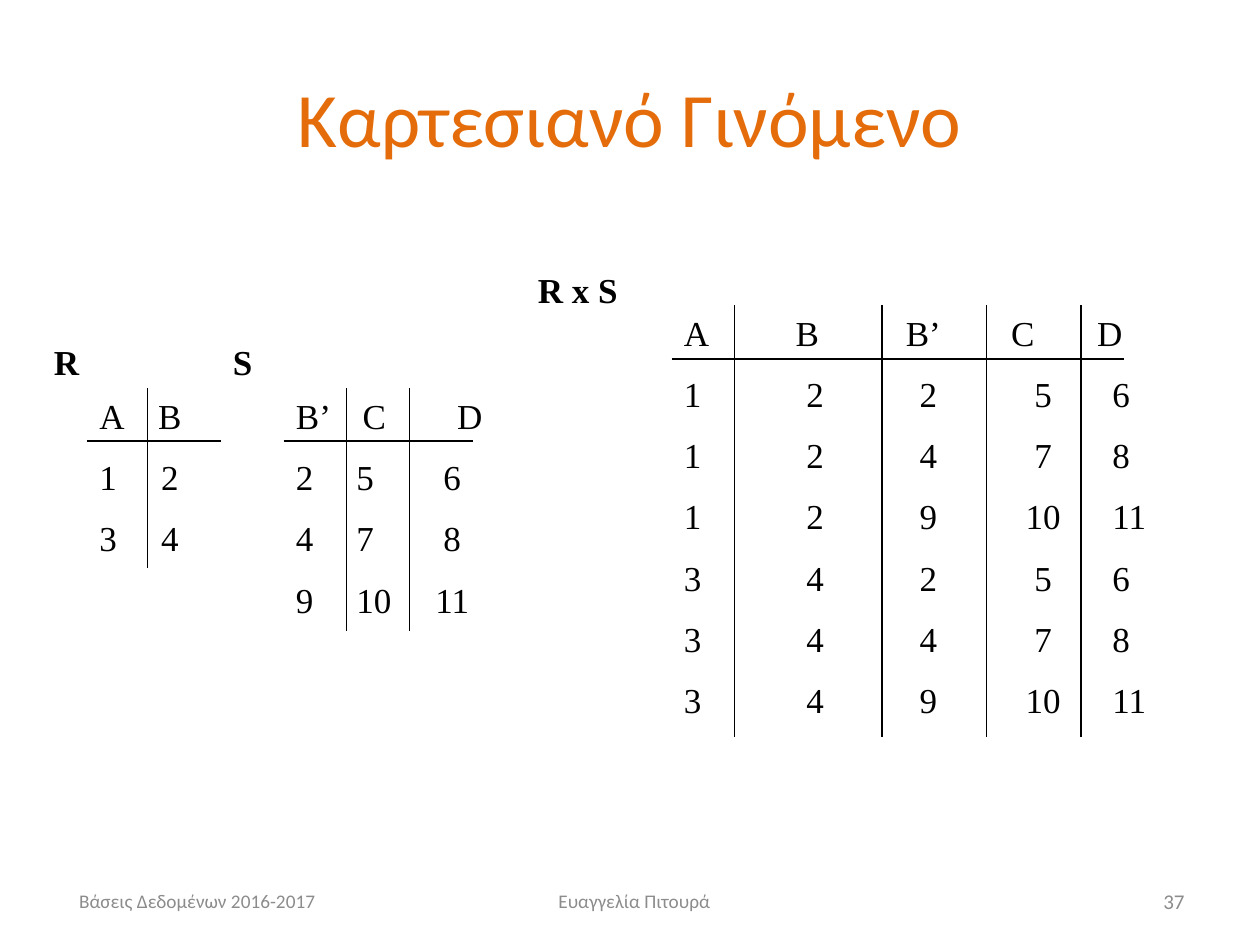
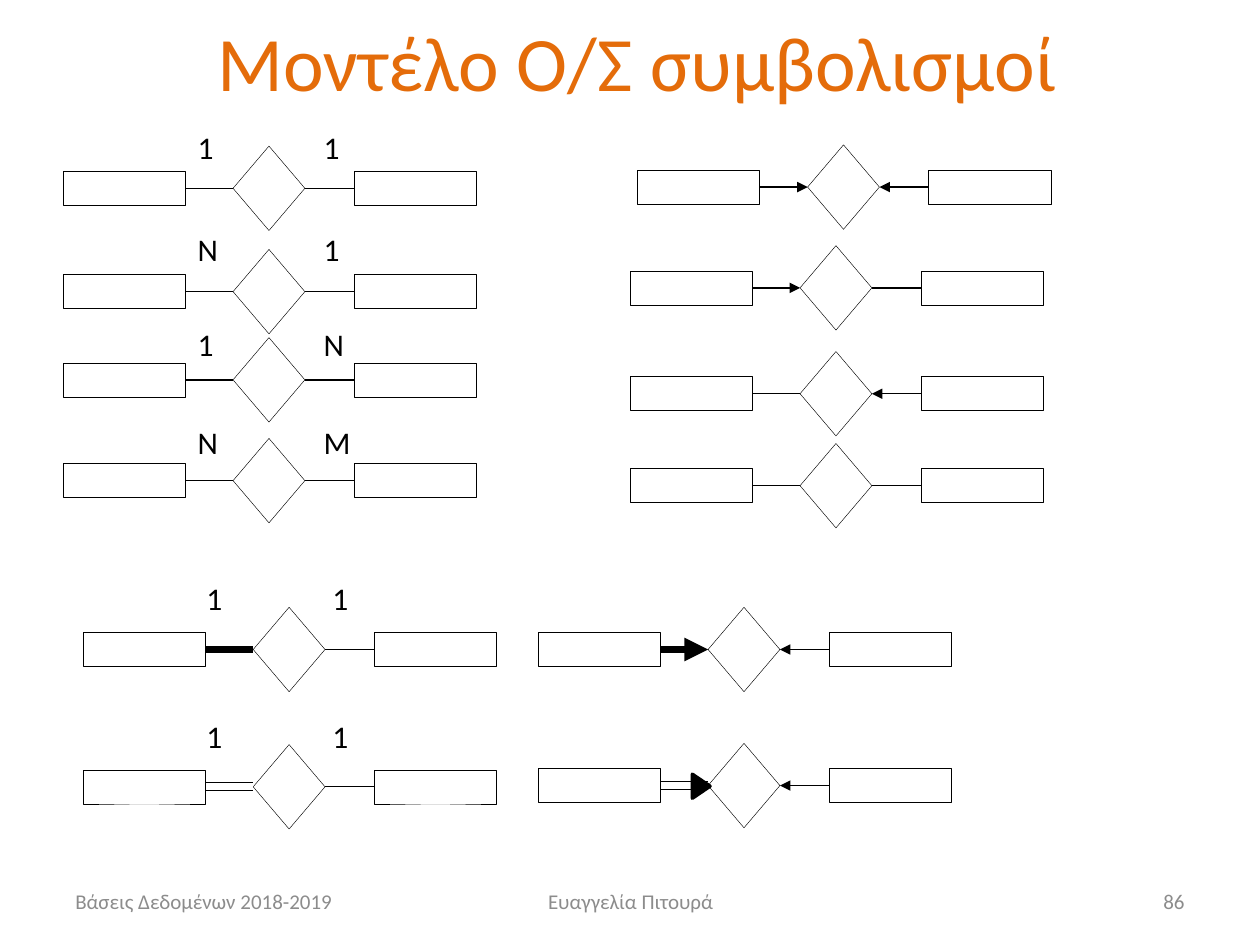
import pptx
import pptx.util
import pptx.dml.color
import pptx.enum.shapes
import pptx.enum.text
import pptx.oxml.ns
import lxml.etree

PX = 9144  # EMU per px, 100 px to the inch
COLORS = {"title": "E46C0A", "footer": "8C8C8C", "ink": "000000"}
SERIF, SANS = "Times New Roman", "Calibri"
SHAPE = pptx.enum.shapes.MSO_SHAPE
ALIGN = pptx.enum.text.PP_ALIGN
MIDDLE = pptx.enum.text.MSO_ANCHOR.MIDDLE
qn = pptx.oxml.ns.qn


def add_text(page, at, rows, size, font, color="ink", bold=False,
             align=ALIGN.LEFT, anchor=None, stops=()):
    """Text box with one paragraph per row; stops holds tab stops for each row."""
    box = page.shapes.add_textbox(*(n * PX for n in at))
    frame = box.text_frame
    frame.word_wrap = True
    if anchor is not None:
        frame.vertical_anchor = anchor
    for index, row in enumerate(rows):
        para = frame.paragraphs[0] if index == 0 else frame.add_paragraph()
        para.text = row
        para.alignment = align
        para.space_before = pptx.util.Pt(11 if index else 0)
        if stops:
            tabs = lxml.etree.SubElement(para._p.get_or_add_pPr(), qn("a:tabLst"))
            for kind, place in stops[index]:
                lxml.etree.SubElement(tabs, qn("a:tab"), pos=str(place * PX), algn=kind)
        para.font.size = pptx.util.Pt(size)
        para.font.name = font
        para.font.bold = bold
        para.font.color.rgb = pptx.dml.color.RGBColor.from_string(COLORS[color])


def add_line(page, start, end, width=0.75, arrow=False):
    line = page.shapes.add_connector(
        pptx.enum.shapes.MSO_CONNECTOR.STRAIGHT, *(n * PX for n in start + end))
    line.line.width = pptx.util.Pt(width)
    line.line.color.rgb = pptx.dml.color.RGBColor.from_string(COLORS["ink"])
    if arrow:
        lxml.etree.SubElement(line.line._get_or_add_ln(), qn("a:tailEnd"), type="triangle")
    lxml.etree.SubElement(line._element.spPr, qn("a:effectLst"))
    return line


deck = pptx.Presentation()
deck.slide_width, deck.slide_height = 1000 * PX, 750 * PX

# Titles and footers of both slides
frames = [
    ("Καρτεσιανό Γινόμενο", (50, 30, 900, 125),
     [("Βάσεις Δεδομένων 2016-2017", 53, 233, 11, ALIGN.LEFT),
      ("Ευαγγελία Πιτουρά", 345, 317, 11, ALIGN.CENTER),
      ("37", 717, 233, 12, ALIGN.RIGHT)]),
    ("Μοντέλο Ο/Σ συμβολισμοί", (56, -4, 900, 104),
     [("Βάσεις Δεδομένων 2018-2019", 50, 233, 12, ALIGN.LEFT),
      ("Ευαγγελία Πιτουρά", 342, 317, 12, ALIGN.CENTER),
      ("86", 717, 233, 12, ALIGN.RIGHT)]),
]
pages = []
for heading, (left, top, width, height), footers in frames:
    page = deck.slides.add_slide(deck.slide_layouts[5])
    title = page.shapes.title
    title.left, title.top, title.width, title.height = (
        left * PX, top * PX, width * PX, height * PX)
    title.text_frame.text = heading
    title.text_frame.vertical_anchor = MIDDLE
    para = title.text_frame.paragraphs[0]
    para.alignment = ALIGN.CENTER
    para.font.size = pptx.util.Pt(44)
    para.font.name = SANS
    para.font.color.rgb = pptx.dml.color.RGBColor.from_string(COLORS["title"])
    for words, left, width, size, align in footers:
        add_text(page, (left, 695, width, 40), [words], size, SANS, "footer",
                 align=align, anchor=MIDDLE)
    pages.append(page)
product_page, notation_page = pages

# Cartesian product: relation names
for name, left, top, width in [("R", 33, 265, 58), ("S", 175, 265, 100),
                               ("R x S", 417, 208, 108)]:
    add_text(product_page, (left, top, width, 43), [name], 20, SERIF, bold=True)

# Relations: box, rule (y, right end), column lines, header stops, value stops, rows
relations = [
    ((69, 308, 106, 143), (350, 175), [117],
     [("ctr", 56)], [("ctr", 56)],
     ["Α Β", "1 2", "3 4"]),
    ((225, 308, 242, 193), (350, 375), [275, 325],
     [("l", 53), ("l", 128)], [("l", 48), ("ctr", 124)],
     ["B’ C D", "2 5 6", "4 7 8", "9 10 11"]),
    ((533, 242, 428, 343), (285, 892), [583, 700, 783, 858],
     [("ctr", 98), ("ctr", 190), ("ctr", 269), ("l", 328)],
     [("ctr", 104), ("ctr", 194), ("ctr", 285), ("l", 340)],
     ["A B B’ C D", "1 2 2 5 6", "1 2 4 7 8", "1 2 9 10 11",
      "3 4 2 5 6", "3 4 4 7 8", "3 4 9 10 11"]),
]
for at, (rule, right), columns, header_stops, value_stops, rows in relations:
    left, top, width, height = at
    add_text(product_page, at, [row.replace(" ", "\t") for row in rows], 20, SERIF,
             stops=[header_stops] + [value_stops] * (len(rows) - 1))
    add_line(product_page, (left, rule), (right, rule))
    for column in columns:
        add_line(product_page, (column, top), (column, top + height))

# Relationships: left, middle, link to the left entity, link to the right entity
relationships = [
    (50, 149, "plain", "plain"), (50, 231, "plain", "plain"),
    (50, 301, "plain", "plain"), (50, 381, "plain", "plain"),
    (506, 148, "arrow", "arrow"), (500, 228, "arrow", "plain"),
    (500, 312, "plain", "arrow"), (500, 385, "plain", "plain"),
    (66, 515, "thick", "plain"), (427, 515, "thick arrow", "arrow"),
    (66, 624, "double", "plain"), (427, 623, "double arrow", "arrow"),
]
ENTITY_W, ENTITY_H, DIAMOND_W, DIAMOND_H = 97, 27, 57, 67
DIAMOND_X, RIGHT_X = 135, 231
for left, middle, left_link, right_link in relationships:
    parts = []
    for kind, x, width, height in [
            (SHAPE.DIAMOND, DIAMOND_X, DIAMOND_W, DIAMOND_H),
            (SHAPE.RECTANGLE, 0, ENTITY_W, ENTITY_H),
            (SHAPE.RECTANGLE, RIGHT_X, ENTITY_W, ENTITY_H)]:
        part = notation_page.shapes.add_shape(
            kind, (left + x) * PX, (middle - height // 2) * PX, width * PX, height * PX)
        part.shadow.inherit = False
        part.fill.background()
        part.line.width = pptx.util.Pt(0.25)
        part.line.color.rgb = pptx.dml.color.RGBColor.from_string(COLORS["ink"])
        parts.append(part)
    diamond, left_entity, right_entity = parts

    for entity, link, entity_side, diamond_side in [
            (left_entity, left_link, 3, 1), (right_entity, right_link, 1, 3)]:
        if "double" in link:
            for y in (middle - 3, middle + 3):
                add_line(notation_page, (left + ENTITY_W, y), (left + DIAMOND_X, y), 0.25)
            continue
        line = add_line(notation_page, (left, middle), (left, middle),
                        4.5 if "thick" in link else 0.75, "arrow" in link)
        line.begin_connect(entity, entity_side)
        line.end_connect(diamond, diamond_side)

    # Solid arrowhead that closes a double line
    if left_link == "double arrow":
        arrowhead = notation_page.shapes.add_shape(
            SHAPE.ISOSCELES_TRIANGLE, (left + 120) * PX, (middle - 6) * PX, 19 * PX, 14 * PX)
        arrowhead.rotation = 90
        arrowhead.shadow.inherit = False
        arrowhead.fill.solid()
        arrowhead.fill.fore_color.rgb = pptx.dml.color.RGBColor.from_string(COLORS["ink"])
        arrowhead.line.width = pptx.util.Pt(2)
        arrowhead.line.color.rgb = pptx.dml.color.RGBColor.from_string(COLORS["ink"])

# Cardinalities above the links
for left, top, pair in [(147, 97, "1\t1"), (147, 178, "Ν\t1"), (147, 253, "1\tΝ"),
                        (147, 331, "Ν\tΜ"), (154, 455, "1\t1"), (154, 564, "1\t1")]:
    add_text(notation_page, (left, top, 152, 40), [pair], 18, SANS, stops=[[("l", 100)]])

deck.save("out.pptx")
